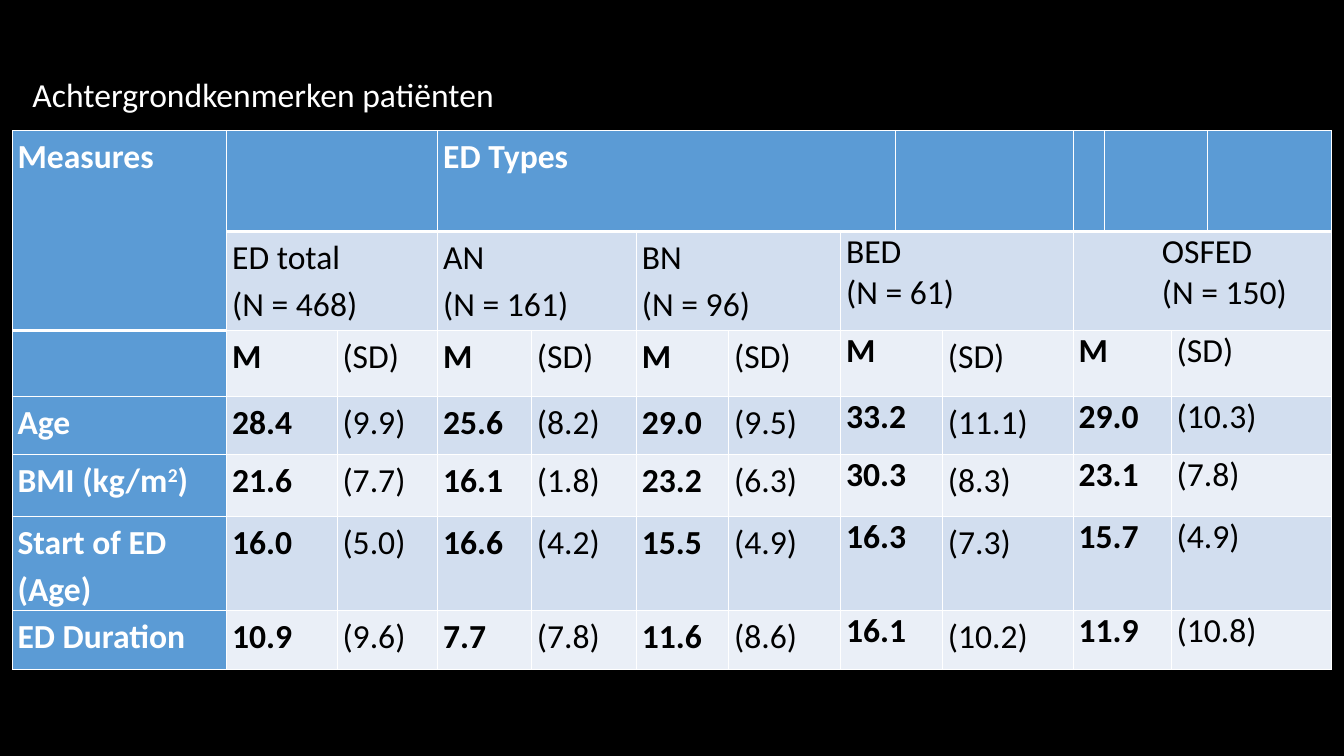
"""Build the slide with the table of patient background measures."""
import dataclasses

import lxml.etree
import pptx
import pptx.dml.color
import pptx.enum.text
import pptx.oxml.ns
import pptx.util

Cm, Pt = pptx.util.Cm, pptx.util.Pt
RGB = pptx.dml.color.RGBColor.from_string


@dataclasses.dataclass(frozen=True)
class Theme:
    font: str = "Calibri"
    size: float = 32
    back: str = "000000"
    dark: str = "000000"
    light: str = "FFFFFF"
    head: str = "5B9BD5"
    bands: tuple = ("EAEFF7", "D2DEEF")
    thin: float = 1
    thick: float = 3


theme = Theme()


def add_run(para, text, color, bold=False):
    run = para.add_run()
    run.text = text
    run.font.name = theme.font
    run.font.size = Pt(theme.size)
    run.font.bold = bold
    run.font.color.rgb = RGB(color)
    return run


def add_edge(cell, side, width):
    props = cell._tc.get_or_add_tcPr()
    line = lxml.etree.SubElement(props, pptx.oxml.ns.qn(f"a:ln{side}"), w=str(Pt(width)))
    fill = lxml.etree.SubElement(line, pptx.oxml.ns.qn("a:solidFill"))
    lxml.etree.SubElement(fill, pptx.oxml.ns.qn("a:srgbClr"), val=theme.light)


deck = pptx.Presentation()
deck.slide_width, deck.slide_height = Cm(45.16), Cm(25.4)
slide = deck.slides.add_slide(deck.slide_layouts[5])
slide.background.fill.solid()
slide.background.fill.fore_color.rgb = RGB(theme.back)

title = slide.shapes.title
title.left, title.top, title.width, title.height = Cm(0.84), Cm(2.31), Cm(25.4), Cm(2.06)
frame = title.text_frame
frame.word_wrap = True
frame.auto_size = pptx.enum.text.MSO_AUTO_SIZE.NONE
frame.vertical_anchor = pptx.enum.text.MSO_ANCHOR.TOP
frame.margin_left, frame.margin_top = Cm(0.25), Cm(0.18)
para = frame.paragraphs[0]
para.alignment = pptx.enum.text.PP_ALIGN.LEFT
add_run(para, "Achtergrondkenmerken patiënten", theme.light)

widths = [7.21, 3.71, 3.38, 3.15, 3.53, 3.1, 3.76, 1.85, 1.57, 4.39, 1.04, 2.26, 1.22, 4.17]
heights = [3.38, 3.33, 2.21, 1.96, 2.08, 3.02, 1.98]
pairs = [0, 1, 2, 3, 4, 5, 6, 7, 9, 10, 12]
starts = [[0, 1, 3, 8, 10, 11, 13], [0, 1, 3, 5, 7, 10]] + [pairs] * 5
tight = {7, 10, 12}
rows = [
    ["Measures", "", "ED Types", "", "", "", ""],
    ["", "ED total\n(N = 468)", "AN\n(N = 161)", "BN\n(N = 96)", "BED\n(N = 61)", "OSFED\n(N = 150)"],
    [""] + ["M", "(SD)"] * 5,
    ["Age", "28.4", "(9.9)", "25.6", "(8.2)", "29.0", "(9.5)", "33.2", "(11.1)", "29.0", "(10.3)"],
    ["BMI (kg/m^2^)", "21.6", "(7.7)", "16.1", "(1.8)", "23.2", "(6.3)", "30.3", "(8.3)", "23.1", "(7.8)"],
    ["Start of ED (Age)", "16.0", "(5.0)", "16.6", "(4.2)", "15.5", "(4.9)", "16.3", "(7.3)", "15.7", "(4.9)"],
    ["ED Duration", "10.9", "(9.6)", "7.7", "(7.8)", "11.6", "(8.6)", "16.1", "(10.2)", "11.9", "(10.8)"],
]

shape = slide.shapes.add_table(len(rows), len(widths), Cm(0.41), Cm(4.39), Cm(sum(widths)), Cm(sum(heights)))
table = shape.table
table.first_row = table.horz_banding = False
for col, width in zip(table.columns, widths):
    col.width = Cm(width)
for row, height in zip(table.rows, heights):
    row.height = Cm(height)

for y in range(len(rows)):
    for x in range(len(widths)):
        cell = table.cell(y, x)
        cell.margin_left = cell.margin_right = Cm(0.18)
        cell.margin_top = cell.margin_bottom = 0
        for side in "LRTB":
            heavy = (side == "B" and (y == 0 or (y == 1 and x == 0))) or (side == "T" and y == 1 and x > 0)
            add_edge(cell, side, theme.thick if heavy else theme.thin)
        cell.fill.solid()
        cell.fill.fore_color.rgb = RGB(theme.head if y == 0 or x == 0 else theme.bands[y % 2])

table.cell(0, 0).merge(table.cell(1, 0))
for y, (texts, begins) in enumerate(zip(rows, starts)):
    ends = begins[1:] + [len(widths)]
    for text, x, end in zip(texts, begins, ends):
        cell = table.cell(y, x)
        if end - x > 1:
            cell.merge(table.cell(y, end - 1))
        if not text:
            continue
        head = y == 0 or x == 0
        color = theme.light if head else theme.dark
        bold = head or not (y == 1 or text.startswith("("))
        para = cell.text_frame.paragraphs[0]
        for n, line in enumerate(text.split("\n")):
            if n and x in tight:
                para.add_line_break()
                para._p[-1].append(lxml.etree.Element(pptx.oxml.ns.qn("a:rPr"), sz=str(theme.size * 100)))
            elif n:
                para = cell.text_frame.add_paragraph()
            if x not in tight:
                para.line_spacing = 1.15
            if y == 1 and x == 10:
                para._p.get_or_add_pPr().set("marL", str(Cm(2.8)))
            for k, part in enumerate(line.split("^")):
                run = add_run(para, part, color, bold)
                if k == 1:
                    run._r.get_or_add_rPr().set("baseline", "30000")

deck.save("out.pptx")
